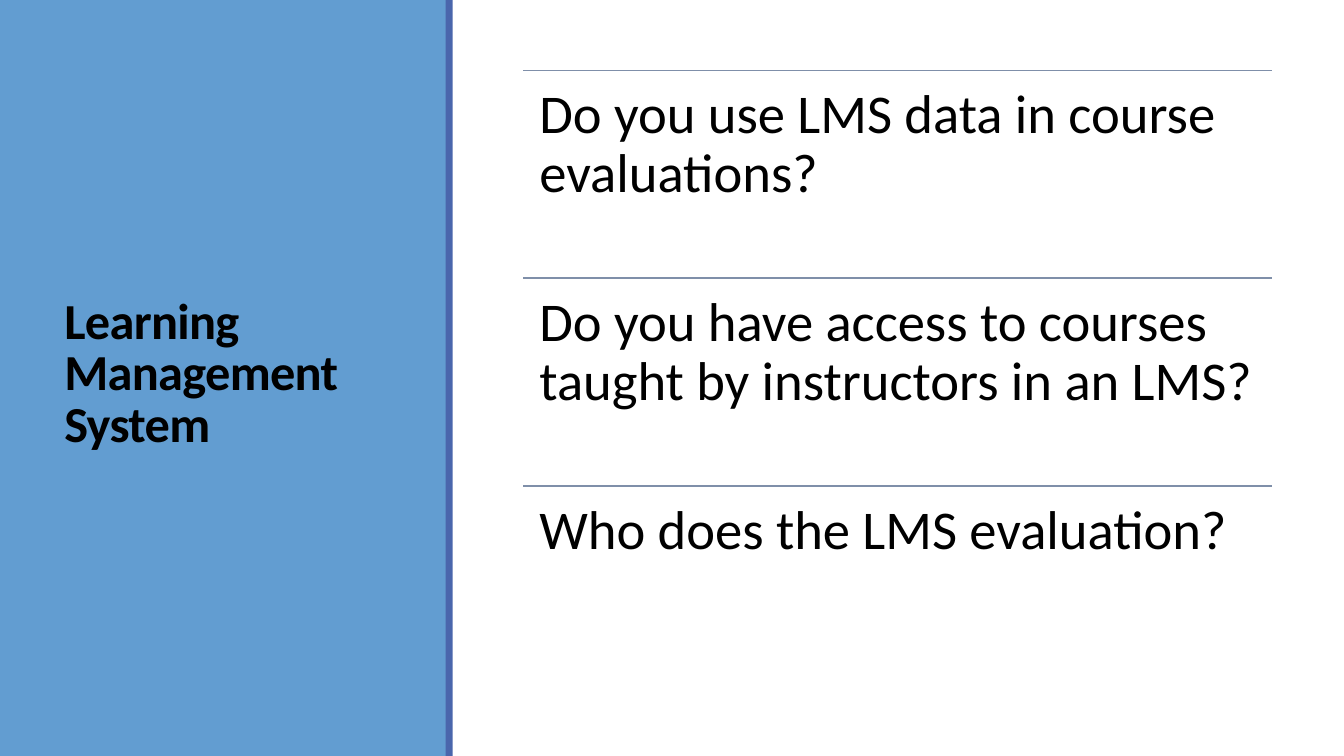
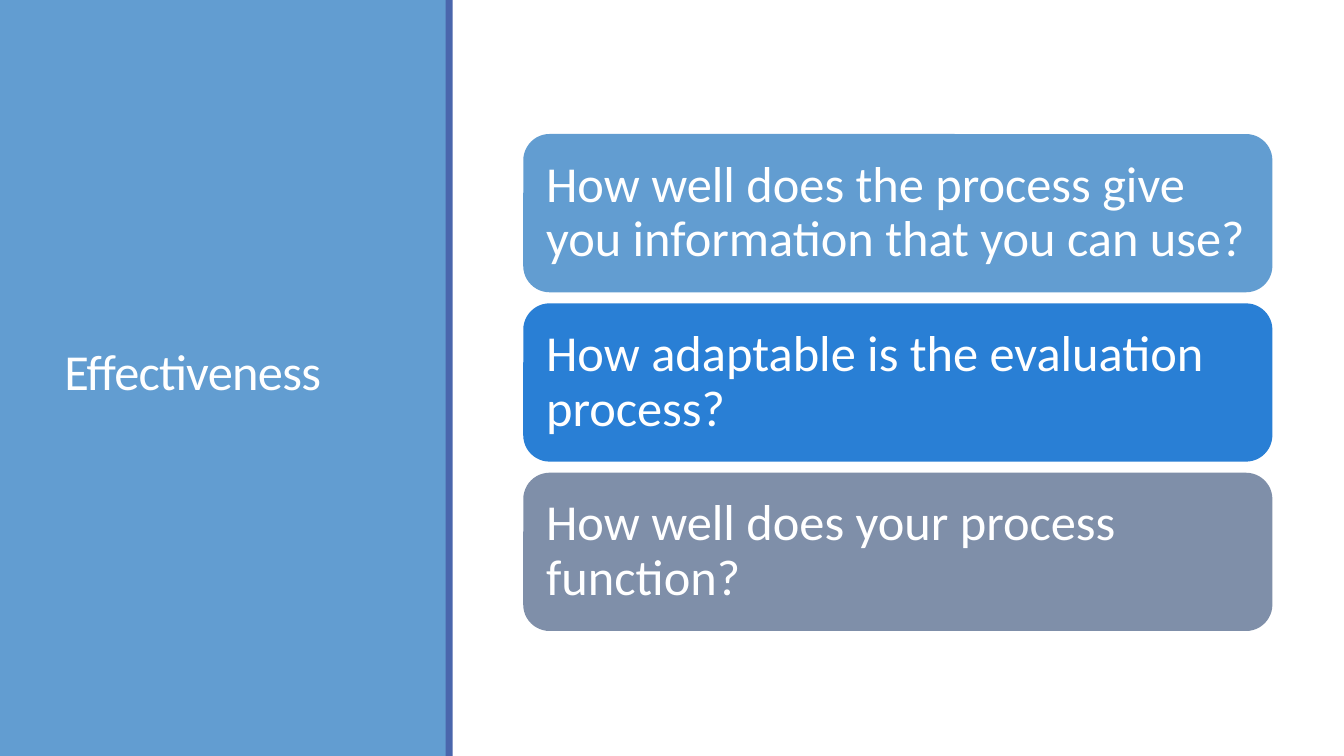
from dataclasses import dataclass

from lxml import etree
from pptx import Presentation
from pptx import util as u
from pptx.dml.color import RGBColor
from pptx.enum import shapes, text
from pptx.oxml.ns import qn

BLACK = RGBColor(0x00, 0x00, 0x00)
WHITE = RGBColor(0xFF, 0xFF, 0xFF)
SKY = RGBColor(0x62, 0x9D, 0xD1)
INDIGO = RGBColor(0x4A, 0x66, 0xAC)
BLUE = RGBColor(0x29, 0x7F, 0xD5)
SLATE = RGBColor(0x7F, 0x8F, 0xA9)

FONT = "Calibri"
WIDTH, HEIGHT = 13.33, 7.5
LIST_LEFT, LIST_WIDTH = 5.19, 7.43
ROW_TOP, ROW_HEIGHT = 0.7, 2.06
CARD_TOP, CARD_HEIGHT, CARD_PITCH = 1.33, 1.57, 1.68


@dataclass(frozen=True)
class Box:
    left: float
    top: float
    width: float
    height: float

    def lengths(self) -> list:
        return [u.Inches(v) for v in (self.left, self.top, self.width, self.height)]


@dataclass(frozen=True)
class Card:
    question: str
    fill: RGBColor


PANEL = Box(0, 0, 4.43, HEIGHT)
STRIPE = Box(4.42, 0, 0.07, HEIGHT)
TITLE = Box(0.54, 0.57, 3.37, 6.31)

LMS_QUESTIONS = (
    "Do you use LMS data in course evaluations?",
    "Do you have access to courses taught by instructors in an LMS?",
    "Who does the LMS evaluation?",
)
EFFECTIVENESS_CARDS = (
    Card("How well does the process give you information that you can use?", SKY),
    Card("How adaptable is the evaluation process?", BLUE),
    Card("How well does your process function?", SLATE),
)


def set_all(target, values: dict) -> None:
    for name, value in values.items():
        setattr(target, name, value)


def write(sp, content: str, size: float, color: RGBColor, inset: float,
          anchor=text.MSO_ANCHOR.MIDDLE, spacing: float = 0.9, bold: bool = False):
    tf = sp.text_frame
    side = u.Inches(inset)
    set_all(tf, {"word_wrap": True, "vertical_anchor": anchor,
                 "margin_left": side, "margin_right": side,
                 "margin_top": side, "margin_bottom": side})
    p = tf.paragraphs[0]
    set_all(p, {"alignment": text.PP_ALIGN.LEFT, "line_spacing": spacing})
    r = p.add_run()
    r.text = content
    set_all(r.font, {"name": FONT, "size": u.Pt(size), "bold": bold})
    r.font.color.rgb = color
    return r


def add_block(s, box: Box, fill: RGBColor, kind=shapes.MSO_SHAPE.RECTANGLE):
    sp = s.shapes.add_shape(kind, *box.lengths())
    sp.shadow.inherit = False
    sp.fill.solid()
    sp.fill.fore_color.rgb = fill
    sp.line.fill.background()
    return sp


def add_rule(s, top: float) -> None:
    y = u.Inches(top)
    line = s.shapes.add_connector(shapes.MSO_CONNECTOR.STRAIGHT, u.Inches(LIST_LEFT), y,
                                  u.Inches(LIST_LEFT + LIST_WIDTH), y)
    line.line.color.rgb = SLATE
    line.line.width = u.Pt(1.25)
    etree.SubElement(line._element.spPr, qn("a:effectLst"))


def add_base(prs, title: str, color: RGBColor, bold: bool = False):
    s = prs.slides.add_slide(prs.slide_layouts[6])
    s.background.fill.solid()
    s.background.fill.fore_color.rgb = WHITE
    add_block(s, PANEL, SKY)
    sp = s.shapes.add_textbox(*TITLE.lengths())
    r = write(sp, title, 36, color, 0.1, spacing=0.85, bold=bold)
    r.font._element.set("spc", "-50")
    add_block(s, STRIPE, INDIGO)
    return s


def add_ruled_list(s, questions: tuple[str, ...]) -> None:
    for i, question in enumerate(questions):
        top = ROW_TOP + i * ROW_HEIGHT
        add_rule(s, top)
        sp = s.shapes.add_textbox(*Box(LIST_LEFT, top, LIST_WIDTH, ROW_HEIGHT).lengths())
        write(sp, question, 39, BLACK, 0.16, anchor=text.MSO_ANCHOR.TOP)


def add_cards(s, cards: tuple[Card, ...]) -> None:
    for i, card in enumerate(cards):
        box = Box(LIST_LEFT, CARD_TOP + i * CARD_PITCH, LIST_WIDTH, CARD_HEIGHT)
        sp = add_block(s, box, card.fill, shapes.MSO_SHAPE.ROUNDED_RECTANGLE)
        write(sp, card.question, 36, WHITE, 0.15)


def main() -> None:
    prs = Presentation()
    set_all(prs, {"slide_width": u.Inches(WIDTH), "slide_height": u.Inches(HEIGHT)})
    add_ruled_list(add_base(prs, "Learning Management System", BLACK, bold=True), LMS_QUESTIONS)
    add_cards(add_base(prs, "Effectiveness", WHITE), EFFECTIVENESS_CARDS)
    prs.save("out.pptx")


if __name__ == "__main__":
    main()
